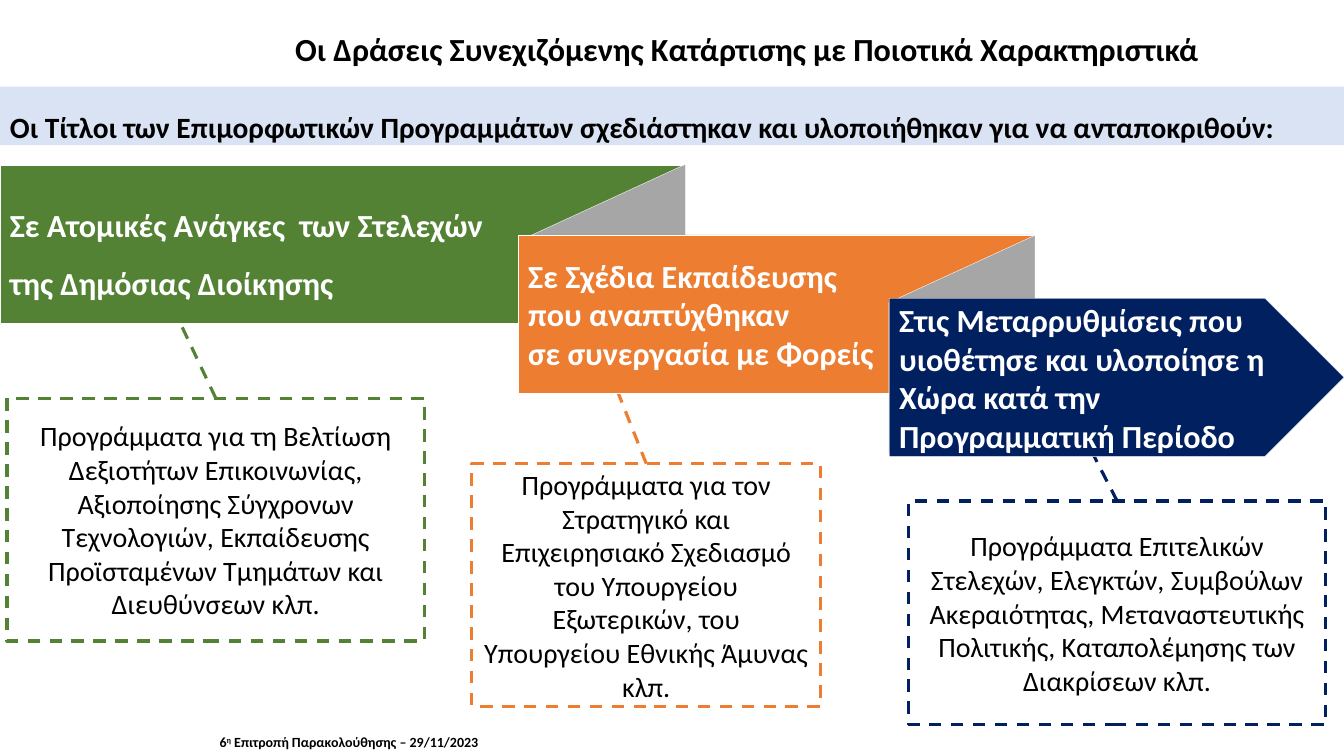
from dataclasses import dataclass

from lxml.etree import SubElement
from pptx import Presentation
from pptx.dml.color import RGBColor as Rgb
from pptx.enum.dml import MSO_LINE as Dash
from pptx.enum.shapes import MSO_CONNECTOR as Link, MSO_SHAPE as Kind
from pptx.enum.text import MSO_ANCHOR as Anchor, MSO_AUTO_SIZE as Fit, PP_ALIGN as Align
from pptx.oxml.ns import qn
from pptx.util import Inches, Pt


@dataclass(frozen=True)
class Theme:
    font: str = "Calibri"
    black: str = "000000"
    white: str = "FFFFFF"
    green: str = "548235"
    orange: str = "ED7D31"
    navy: str = "002060"
    gray: str = "A6A6A6"
    pale: str = "DAE3F3"
    head: int = 23
    lead: int = 21
    body: int = 20
    foot: int = 10
    thin: float = 0.25
    thick: float = 2.25


T = Theme()


def color(code):
    return Rgb.from_string(code)


def apply(obj, look):
    for name, value in look.items():
        setattr(obj, name, value)


def place(box):
    return [Inches(n) for n in box]


def write(shape, lines, size, ink=T.black, bold=False, para=None, frame=None):
    """Each line is a list of (text, baseline) runs or a plain string."""
    text = shape.text_frame
    apply(text, {"word_wrap": True, "vertical_anchor": Anchor.MIDDLE, **(frame or {})})
    for i, line in enumerate(lines):
        item = text.paragraphs[0] if i == 0 else text.add_paragraph()
        apply(item, {"alignment": Align.LEFT, **(para or {})})
        for words, base in [(line, 0)] if isinstance(line, str) else line:
            run = item.add_run()
            run.text = words
            apply(run.font, {"name": T.font, "size": Pt(size), "bold": bold})
            run.font.color.rgb = color(ink)
            if base:
                run.font._element.set("baseline", str(base * 1000))


def stroke(line, ink, width, dash=None):
    line.color.rgb = color(ink)
    apply(line, {"width": Pt(width), "dash_style": dash})


def block(slide, box, kind=Kind.RECTANGLE, fill=None, edge=None):
    shape = slide.shapes.add_shape(kind, *place(box))
    shape.shadow.inherit = False
    if fill:
        shape.fill.solid()
        shape.fill.fore_color.rgb = color(fill)
    else:
        shape.fill.background()
    if edge:
        stroke(shape.line, *edge)
    else:
        shape.line.fill.background()
    return shape


def label(slide, box, lines, size, para, frame):
    shape = slide.shapes.add_textbox(*place(box))
    write(shape, lines, size, bold=True, para=para, frame=frame)


def note(slide, box, tip, ink, words):
    """Dashed box with a dashed leader from its top centre to the banner."""
    shape = block(slide, box, edge=(ink, T.thick, Dash.DASH))
    write(shape, [words], T.body, para={"alignment": Align.CENTER})
    left, top, width, _ = box
    line = slide.shapes.add_connector(Link.STRAIGHT, *place((left + width / 2, top, *tip)))
    stroke(line.line, ink, T.thick, Dash.DASH)
    SubElement(line._element.spPr, qn("a:effectLst"))


def step(slide, box, fill, lines, kind=Kind.RECTANGLE, space=1.0):
    shape = block(slide, box, kind, fill, (T.white, T.thin))
    write(shape, lines, T.head, T.white, True, {"line_spacing": space})


def fold(slide, box):
    shape = block(slide, box, Kind.PARALLELOGRAM, T.gray, (T.white, T.thin))
    shape.adjustments[0] = 0.46
    shape.rotation = 270
    shape._element.spPr.xfrm.set("flipV", "1")


def main():
    deck = Presentation()
    apply(deck, {"slide_width": Inches(13.33), "slide_height": Inches(7.5)})
    slide = deck.slides.add_slide(deck.slide_layouts[6])
    grow = {"vertical_anchor": Anchor.TOP, "auto_size": Fit.SHAPE_TO_FIT_TEXT}
    mid = {"alignment": Align.CENTER}
    wide = {"line_spacing": 1.5}

    # Footer
    label(slide, (2.05, 7.23, 2.82, 0.27),
          [[("6", 0), ("η", 30), (" Επιτροπή Παρακολούθησης – 29/11/2023", 0)]],
          T.foot, mid, {**grow, "word_wrap": False})

    # Programme notes
    note(slide, (9.01, 4.97, 4.14, 2.22), (10.73, 4.29), T.navy,
         "Προγράμματα Επιτελικών Στελεχών, Ελεγκτών, Συμβούλων Ακεραιότητας, "
         "Μεταναστευτικής Πολιτικής, Καταπολέμησης των Διακρίσεων κλπ.")
    note(slide, (0.07, 3.95, 4.14, 2.41), (1.79, 3.21), T.green,
         "Προγράμματα για τη Βελτίωση Δεξιοτήτων Επικοινωνίας, Αξιοποίησης Σύγχρονων "
         "Τεχνολογιών, Εκπαίδευσης Προϊσταμένων Τμημάτων και Διευθύνσεων κλπ.")
    note(slide, (4.68, 4.6, 3.46, 2.41), (6.12, 3.87), T.orange,
         "Προγράμματα για τον Στρατηγικό και Επιχειρησιακό Σχεδιασμό του Υπουργείου "
         "Εξωτερικών, του Υπουργείου Εθνικής Άμυνας κλπ.")

    # Lead band and title
    band = block(slide, (0, 0.86, 13.33, 0.58), fill=T.pale)
    write(band, ["Οι Τίτλοι των Επιμορφωτικών Προγραμμάτων σχεδιάστηκαν και "
                 "υλοποιήθηκαν για να ανταποκριθούν:"],
          T.lead, bold=True, para=wide, frame=grow)
    label(slide, (1.83, 0.05, 11.17, 0.62),
          ["Οι Δράσεις Συνεχιζόμενης Κατάρτισης με Ποιοτικά Χαρακτηριστικά"],
          T.head, {**mid, **wide}, grow)

    # Folded ribbon
    step(slide, (0, 1.64, 6.8, 1.57), T.green,
         ["Σε Ατομικές Ανάγκες  των Στελεχών", "της Δημόσιας Διοίκησης"], space=1.5)
    fold(slide, (4.83, 1.94, 2.28, 1.66))
    step(slide, (5.14, 2.33, 5.12, 1.57), T.orange,
         ["Σε Σχέδια Εκπαίδευσης", "που αναπτύχθηκαν", "σε συνεργασία με Φορείς"])
    fold(slide, (8.46, 2.69, 2.16, 1.45))
    step(slide, (8.82, 2.96, 4.51, 1.57), T.navy,
         ["Στις Μεταρρυθμίσεις που υιοθέτησε και υλοποίησε η Χώρα κατά την "
          "Προγραμματική Περίοδο"], Kind.PENTAGON)

    deck.save("out.pptx")


if __name__ == "__main__":
    main()
